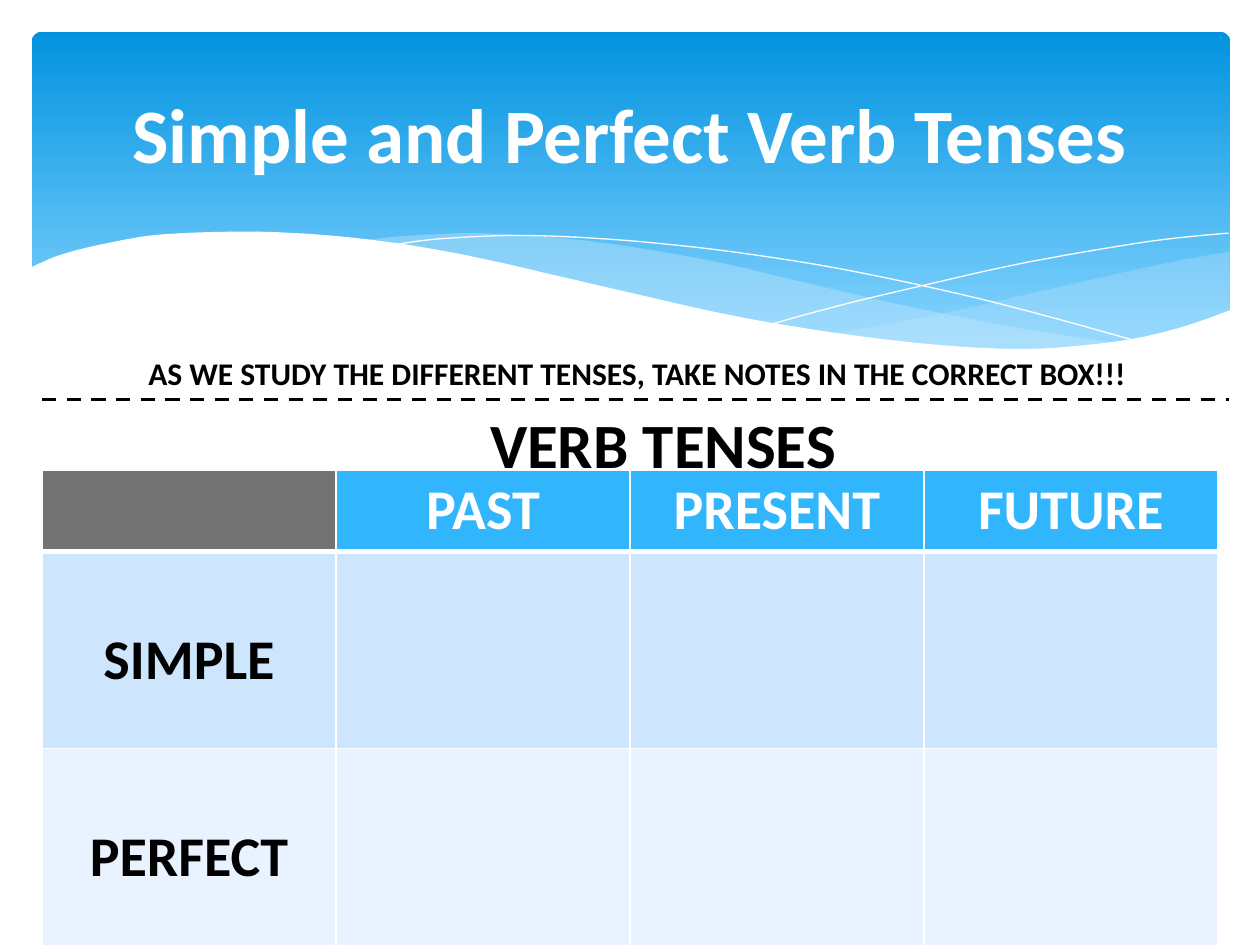
import pptx
import pptx.util
import pptx.dml.color
import pptx.enum.dml
import pptx.enum.shapes
import pptx.enum.text
import pptx.oxml
import pptx.oxml.ns
from lxml import etree

Cm, Pt = pptx.util.Cm, pptx.util.Pt
ALIGN = pptx.enum.text.PP_ALIGN
ANCHOR = pptx.enum.text.MSO_ANCHOR

HUES = {
    "white": "FFFFFF", "black": "000000", "top": "0293E0", "low": "83D3FE",
    "mist": "C6E7FC", "head": "31B6FD", "odd": "CEE5FE", "even": "E8F3FF",
}
ROWS = [["", "PAST", "PRESENT", "FUTURE"], ["SIMPLE", "", "", ""], ["PERFECT", "", "", ""]]

STEPS = 5
UNIT = 10
RIGHT = [(976, 247), (976, 200)]
SWELL = [(975, 200), (935, 207), (861, 223), (779, 242), (706, 257), (661, 265)]
TROUGH = [(661, 265), (719, 271), (769, 277), (814, 278), (854, 276),
          (889, 272), (921, 265), (949, 257), (976, 247)]
CREST = [(893, 273), (837, 265), (775, 254), (706, 240), (629, 222), (569, 208),
         (514, 198), (465, 191), (420, 187), (380, 185), (344, 186), (313, 188), (286, 191)]
UNDER = [(286, 191), (342, 199), (404, 211), (449, 222), (530, 240), (601, 255),
         (665, 266), (722, 274), (773, 277), (818, 278), (857, 277), (893, 273)]
FALL = [(309, 195), (344, 190), (401, 187), (450, 188), (510, 192), (582, 200),
        (665, 213), (760, 233), (831, 251), (907, 272)]
RISE = [(613, 257), (672, 241), (748, 223), (806, 210), (866, 199), (924, 190), (975, 185)]
EDGE = [(977, 246), (940, 259), (899, 269), (850, 275), (809, 277), (761, 275),
        (708, 270), (648, 262), (579, 250), (503, 233), (447, 220), (391, 207),
        (340, 197), (292, 190), (250, 186), (211, 184), (177, 184), (146, 185),
        (119, 187), (95, 191), (67, 197), (46, 203), (36, 207), (23, 213)]


def rgb(name):
    """Return the named colour."""
    return pptx.dml.color.RGBColor.from_string(HUES[name])


def apply(item, vals):
    """Set each attribute of item from a dict."""
    for key, val in vals.items():
        setattr(item, key, val)


def paint(fill, name):
    """Fill with one solid colour."""
    fill.solid()
    fill.fore_color.rgb = rgb(name)


def fade(node, share):
    """Make the solid fill under node partly clear."""
    hue = node.find(".//" + pptx.oxml.ns.qn("a:srgbClr"))
    etree.SubElement(hue, pptx.oxml.ns.qn("a:alpha"), val=str(share * 1000))


def write(frame, text, size, hue="black", align=ALIGN.CENTER):
    """Write one bold line of text."""
    para = frame.paragraphs[0]
    para.alignment = align
    run = para.add_run()
    run.text = text
    apply(run.font, {"name": "Calibri", "size": Pt(size), "bold": True})
    run.font.color.rgb = rgb(hue)


def curve(knots):
    """Run a smooth curve through the knots."""
    ends = [knots[0], *knots, knots[-1]]
    dots = [knots[0]]
    for a, b, c, d in zip(ends, ends[1:], ends[2:], ends[3:]):
        for step in range(1, STEPS + 1):
            t = step / STEPS
            dots.append(tuple(
                (2 * q + (r - p) * t + (2 * p - 5 * q + 4 * r - s) * t ** 2
                 + (3 * q - p - 3 * r + s) * t ** 3) / 2
                for p, q, r, s in zip(a, b, c, d)))
    return dots


def wave(slide, dots, hue, share=None, filled=True):
    """Draw a filled wave or an open white thread."""
    dots = [(x * UNIT, y * UNIT) for x, y in dots]
    pen = slide.shapes.build_freeform(*dots[0], scale=Cm(2.54) / (100 * UNIT))
    pen.add_line_segments(dots[1:], close=filled)
    shape = pen.convert_to_shape()
    shape.shadow.inherit = False
    if filled:
        paint(shape.fill, hue)
        shape.line.fill.background()
    else:
        shape.fill.background()
        paint(shape.line.fill, hue)
        shape.line.width = Pt(0)
    if share:
        fade(shape.element.spPr, share)


def banner(slide):
    """Draw the rounded blue banner and its waves."""
    kind = pptx.enum.shapes.MSO_SHAPE.ROUNDED_RECTANGLE
    shape = slide.shapes.add_shape(kind, Cm(0.64), Cm(0.64), Cm(24.16), Cm(6.86))
    shape.adjustments[0] = 0.03
    shape.shadow.inherit = False
    shape.line.fill.background()
    shape.fill.gradient()
    shape.fill.gradient_angle = 270
    for stop, name, place in zip(shape.fill.gradient_stops, ("top", "low"), (0, 0.9)):
        stop.color.rgb = rgb(name)
        stop.position = place
    wave(slide, curve(SWELL) + curve(TROUGH) + RIGHT, "mist", 29)
    wave(slide, curve(CREST) + curve(UNDER), "mist", 40)
    for knots in (FALL, RISE):
        wave(slide, curve(knots), "white", filled=False)
    wave(slide, curve(EDGE) + [(23, 329), (977, 329)], "white")


def border(cell, row):
    """Rule a cell in white, thick below the header."""
    props = cell._tc.get_or_add_tcPr()
    thick = {"T": row == 1, "B": row == 0}
    for spot, side in enumerate("LRTB"):
        width = Pt(3 if thick.get(side) else 1)
        props.insert(spot, pptx.oxml.parse_xml(
            f'<a:ln{side} {pptx.oxml.ns.nsdecls("a")} w="{width}"><a:solidFill>'
            f'<a:srgbClr val="{HUES["white"]}"/></a:solidFill></a:ln{side}>'))


def grid(slide):
    """Build the table of tenses."""
    table = slide.shapes.add_table(
        3, 4, Cm(0.85), Cm(9.48), Cm(23.7), Cm(9.53)).table
    table.horz_banding = False
    for line, high in zip(table.rows, (1.59, 3.97, 3.97)):
        line.height = Cm(high)
    for row, (texts, hue) in enumerate(zip(ROWS, ("head", "odd", "even"))):
        for col, text in enumerate(texts):
            cell = table.cell(row, col)
            blank = row == col == 0
            paint(cell.fill, "black" if blank else hue)
            if blank:
                fade(cell._tc, 55)
            if text:
                write(cell.text_frame, text, 32, "black" if row else "white")
            if text and row:
                cell.margin_top = Cm(1.5)
            border(cell, row)


def label(slide, text, size, box, wrap, align):
    """Add a text box."""
    frame = slide.shapes.add_textbox(*map(Cm, box)).text_frame
    frame.word_wrap = wrap
    write(frame, text, size, align=align)


def title(slide, text):
    """Place the title in front of the banner."""
    shape = slide.shapes.title
    apply(shape, {"left": Cm(1.27), "top": Cm(0.94), "width": Cm(22.86), "height": Cm(3.48)})
    shape.text_frame.vertical_anchor = ANCHOR.MIDDLE
    write(shape.text_frame, text, 44, "white")
    slide.shapes.element.append(shape.element)


def rule(slide):
    """Draw the dashed rule."""
    kind = pptx.enum.shapes.MSO_CONNECTOR.STRAIGHT
    shape = slide.shapes.add_connector(kind, Cm(0.85), Cm(8.05), Cm(24.77), Cm(8.05))
    paint(shape.line.fill, "black")
    apply(shape.line, {"width": Pt(2), "dash_style": pptx.enum.dml.MSO_LINE.DASH})
    etree.SubElement(shape.element.spPr, pptx.oxml.ns.qn("a:effectLst"))


def main():
    """Build and save the slide."""
    deck = pptx.Presentation()
    apply(deck, {"slide_width": Cm(25.4), "slide_height": Cm(19.05)})
    slide = deck.slides.add_slide(deck.slide_layouts[5])
    banner(slide)
    grid(slide)
    title(slide, "Simple and Perfect Verb Tenses")
    label(slide, "AS WE STUDY THE DIFFERENT TENSES, TAKE NOTES IN THE CORRECT BOX!!!",
          18, (1.27, 7.01, 23.16, 1.02), True, ALIGN.CENTER)
    label(slide, "VERB TENSES", 36, (9.63, 8.05, 7.95, 1.8), False, ALIGN.LEFT)
    rule(slide)
    deck.save("out.pptx")


if __name__ == "__main__":
    main()
